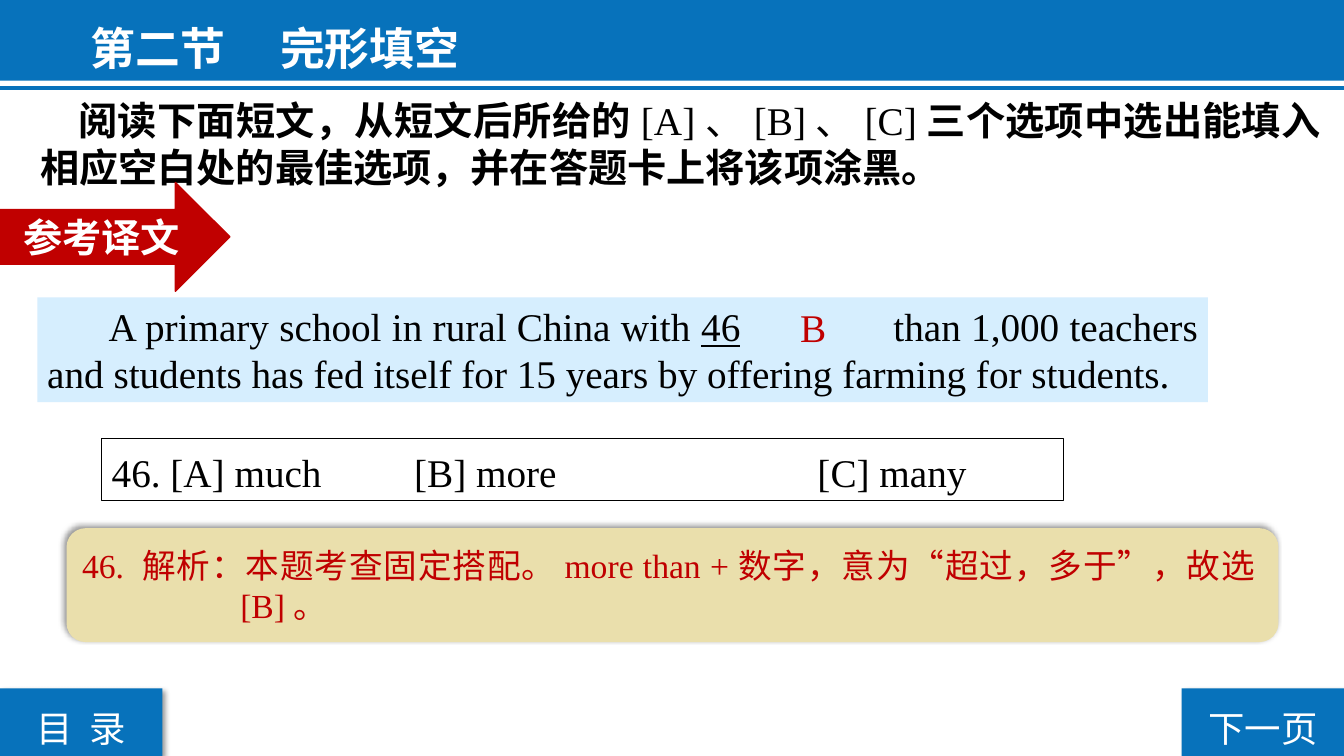
from dataclasses import dataclass
from typing import Optional

from lxml.etree import SubElement
from pptx import Presentation
from pptx.dml.color import RGBColor
from pptx.enum.shapes import MSO_CONNECTOR, MSO_SHAPE
from pptx.enum.text import MSO_ANCHOR, PP_ALIGN
from pptx.oxml.ns import qn
from pptx.util import Emu, Pt

PX = 9144  # EMU per px, 100 px to the inch

BLUE = RGBColor(0x07, 0x72, 0xBB)
PALE_BLUE = RGBColor(0xD6, 0xEE, 0xFE)
SAND = RGBColor(0xEA, 0xDF, 0xAC)
RED = RGBColor(0xC0, 0x00, 0x00)
WHITE = RGBColor(0xFF, 0xFF, 0xFF)
BLACK = RGBColor(0x00, 0x00, 0x00)

SANS = "Noto Sans CJK SC"
SERIF = "Times New Roman"


@dataclass(frozen=True)
class Span:
    text: str
    font: Optional[str] = None
    bold: Optional[bool] = None
    underline: Optional[bool] = None


@dataclass(frozen=True)
class Block:
    """A box with one paragraph; lengths in px, text size in points."""
    left: int
    top: int
    width: int
    height: int
    spans: tuple[Span, ...] = ()
    size: int = 28
    font: str = SERIF
    color: RGBColor = BLACK
    bold: bool = False
    align: PP_ALIGN = PP_ALIGN.JUSTIFY
    anchor: MSO_ANCHOR = MSO_ANCHOR.TOP
    spacing: float = 1.0
    margin: int = 0
    indent: int = 0
    tab_size: int = 100  # distance between tab stops
    preset: Optional[MSO_SHAPE] = None  # None makes a text box
    fill: Optional[RGBColor] = None
    line: Optional[RGBColor] = None
    line_width: float = 1
    shadow_angle: Optional[int] = None


def px(length: int) -> Emu:
    return Emu(length * PX)


def add_shadow(shape, angle: int) -> None:
    effects = shape._element.spPr.find(qn("a:effectLst"))
    shadow = SubElement(effects, qn("a:outerShdw"), blurRad=str(Pt(4)),
                        dist=str(Pt(3)), dir=str(angle * 60000),
                        algn="ctr", rotWithShape="0")
    color = SubElement(shadow, qn("a:srgbClr"), val=str(BLACK))
    SubElement(color, qn("a:alpha"), val="40000")


def write_text(shape, block: Block) -> None:
    frame = shape.text_frame
    frame.word_wrap = True
    frame.vertical_anchor = block.anchor
    paragraph = frame.paragraphs[0]
    paragraph.alignment = block.align
    paragraph.line_spacing = block.spacing
    font = paragraph.font
    font.name, font.size, font.bold = block.font, Pt(block.size), block.bold
    font.color.rgb = block.color

    # Indents, tab distance and East Asian font
    properties = paragraph._p.get_or_add_pPr()
    properties.set("marL", str(px(block.margin)))
    properties.set("indent", str(px(block.indent)))
    properties.set("defTabSz", str(px(block.tab_size)))
    SubElement(properties.find(qn("a:defRPr")), qn("a:ea"), typeface=SANS)

    for span in block.spans:
        run = paragraph.add_run()
        run.text = span.text
        run.font.name = span.font
        run.font.bold = span.bold
        run.font.underline = span.underline


def add_block(slide, block: Block) -> None:
    box = [px(n) for n in (block.left, block.top, block.width, block.height)]
    if block.preset is None:
        shape = slide.shapes.add_textbox(*box)
    else:
        shape = slide.shapes.add_shape(block.preset, *box)
        shape.shadow.inherit = False
        if block.fill is None:
            shape.fill.background()
        else:
            shape.fill.solid()
            shape.fill.fore_color.rgb = block.fill
        if block.line is None:
            shape.line.fill.background()
        else:
            shape.line.color.rgb = block.line
            shape.line.width = Pt(block.line_width)
        if block.shadow_angle is not None:
            add_shadow(shape, block.shadow_angle)
    if block.spans:
        write_text(shape, block)


def add_rule(slide, left: int, right: int, y: int) -> None:
    rule = slide.shapes.add_connector(
        MSO_CONNECTOR.STRAIGHT, px(left), px(y), px(right), px(y))
    rule.line.color.rgb = BLUE
    rule.line.width = Pt(3)
    SubElement(rule._element.spPr, qn("a:effectLst"))


def navigation_button(left: int, label: str) -> Block:
    return Block(left, 683, 161, 67, (Span(label),), size=26, font=SANS,
                 color=WHITE, align=PP_ALIGN.CENTER, spacing=1.3,
                 preset=MSO_SHAPE.RECTANGLE, fill=BLUE, shadow_angle=45)


HEADER = Block(-1, 0, 1336, 80, preset=MSO_SHAPE.RECTANGLE, fill=BLUE)

CONTENT = (
    navigation_button(0, "目  录"),
    navigation_button(1172, "下一页"),
    # Passage: the underlined tab is the blank
    Block(37, 295, 1161, 104, (
        Span("A primary school in rural China with "),
        Span("46\t", underline=True),
        Span(" than 1,000 teachers and students has fed itself for 15 years"
             " by offering farming for students."),
    ), indent=61, tab_size=825, preset=MSO_SHAPE.RECTANGLE, fill=PALE_BLUE),
    # Title
    Block(80, 0, 912, 80, (Span("第二节\t完形填空"),), size=32, font=SANS,
          color=WHITE, bold=True, align=PP_ALIGN.LEFT, spacing=1.3,
          tab_size=188),
    # Instructions
    Block(30, 91, 1290, 104, (
        Span("阅读下面短文，从短文后所给的"),
        Span("[A]、[B]、[C]", font=SERIF, bold=False),
        Span("三个选项中选出能填入相应空白处的最佳选项，并在答题卡上将该项涂黑。"),
    ), font=SANS, bold=True, indent=38),
    # Options
    Block(101, 435, 954, 62, (Span("46. [A] much \t[B] more \t\t\t[C] many"),),
          spacing=1.1, preset=MSO_SHAPE.RECTANGLE,
          line=BLACK, line_width=0.75),
    # Explanation
    Block(66, 524, 1202, 113, (
        Span("46. 解析：本题考查固定搭配。more than +数字，意为“超过，多于”，故选[B]。"),
    ), size=24, color=RED, anchor=MSO_ANCHOR.MIDDLE, margin=157, indent=-157,
          preset=MSO_SHAPE.ROUNDED_RECTANGLE, fill=SAND, shadow_angle=225),
    # Translation arrow
    Block(0, 181, 228, 108, (Span("参考译文"),), font=SANS, color=WHITE,
          bold=True, align=PP_ALIGN.CENTER, anchor=MSO_ANCHOR.MIDDLE,
          preset=MSO_SHAPE.RIGHT_ARROW, fill=RED, line=RED),
    # Answer
    Block(762, 296, 89, 57, (Span("B"),), color=RED, align=PP_ALIGN.CENTER),
)


def main() -> None:
    presentation = Presentation()
    presentation.slide_width, presentation.slide_height = px(1333), px(750)
    slide = presentation.slides.add_slide(presentation.slide_layouts[6])
    add_block(slide, HEADER)
    add_rule(slide, 0, 1335, 87)
    for block in CONTENT:
        add_block(slide, block)
    presentation.save("out.pptx")


if __name__ == "__main__":
    main()
